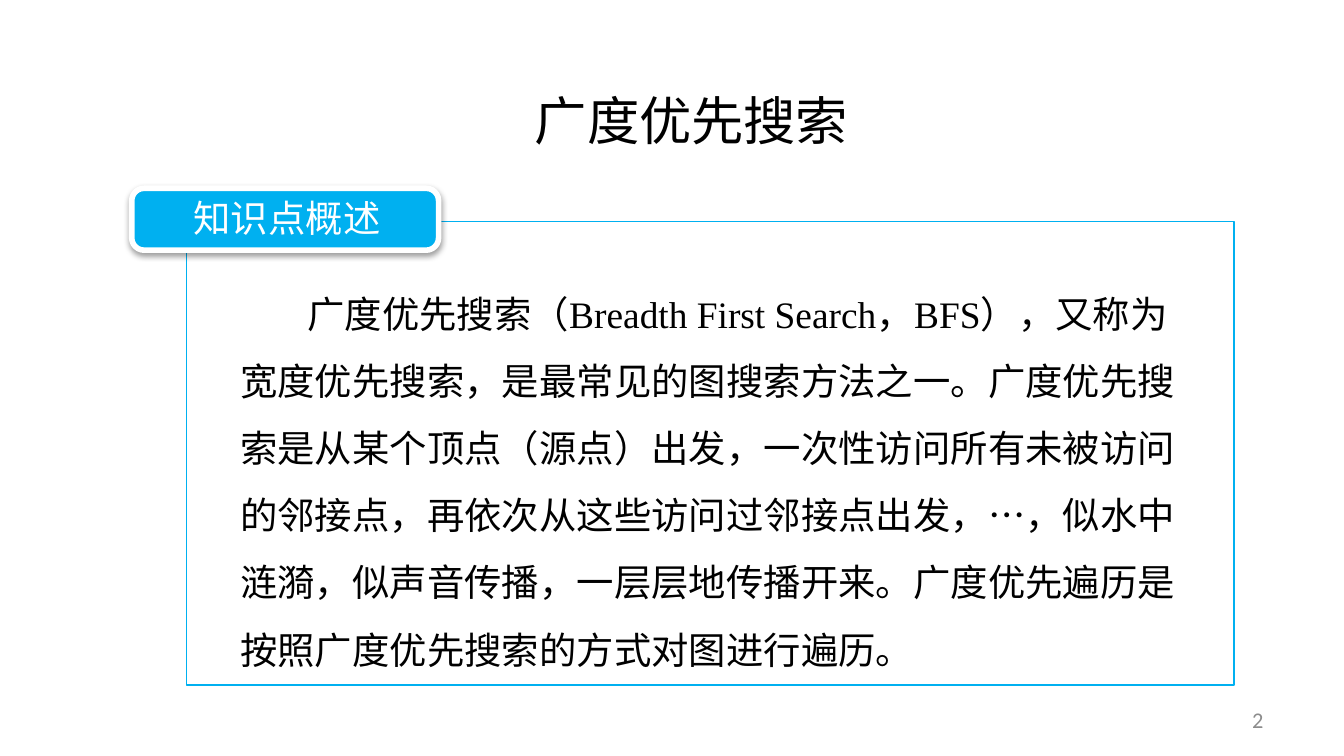
import pptx
import pptx.dml.color
import pptx.enum.shapes
import pptx.enum.text
import pptx.oxml
import pptx.oxml.ns
import pptx.util
from pptx.util import Cm

RGB = pptx.dml.color.RGBColor
BLACK = RGB(0x00, 0x00, 0x00)
WHITE = RGB(0xFF, 0xFF, 0xFF)
BLUE = RGB(0x00, 0xB0, 0xF0)
GRAY = RGB(0x8C, 0x8C, 0x8C)

SANS = "Noto Sans CJK SC"
SERIF = "Times New Roman"
PLAIN = "Calibri"

KIND = pptx.enum.shapes.MSO_SHAPE
ALIGN = pptx.enum.text.PP_ALIGN
ANCHOR = pptx.enum.text.MSO_ANCHOR

BADGE = (Cm(2.49), Cm(3.56), Cm(5.8), Cm(1.17))
LABEL = (Cm(2.49), Cm(3.56), Cm(5.87), Cm(1.12))

INTRO = [
    ("广度优先搜索（", PLAIN),
    ("Breadth First Search，BFS", SERIF),
    ("），又称为宽度优先搜索，是最常见的图搜索方法之一。广度优先搜索是从某个顶点（源点）出发，"
     "一次性访问所有未被访问的邻接点，再依次从这些访问过邻接点出发，…，似水中涟漪，似声音传播，"
     "一层层地传播开来。广度优先遍历是按照广度优先搜索的方式对图进行遍历。", PLAIN),
]


def apply(target, values):
    for name, value in values.items():
        setattr(target, name, value)


def add_xml(parent, tag, **attrs):
    """Append a drawing element and return it."""
    child = pptx.oxml.parse_xml(f"<a:{tag} {pptx.oxml.ns.nsdecls('a')}/>")
    for name, value in attrs.items():
        child.set(name, str(value))
    parent.append(child)
    return child


def add_text(slide, area, runs, size, color, para=None, frame=None, indent=0):
    box = slide.shapes.add_textbox(*area)
    apply(box.text_frame, {"word_wrap": True, **(frame or {})})
    line = box.text_frame.paragraphs[0]
    apply(line, para or {})
    if indent:
        line._p.get_or_add_pPr().set("indent", str(indent))
    for text, face in runs:
        run = line.add_run()
        run.text = text
        apply(run.font, {"name": face, "size": pptx.util.Pt(size)})
        run.font.color.rgb = color
        add_xml(run._r.get_or_add_rPr(), "ea", typeface=SANS)


def add_box(slide, kind, area, fill, edge, width):
    box = slide.shapes.add_shape(kind, *area)
    box.shadow.inherit = False
    box.fill.solid()
    box.fill.fore_color.rgb = fill
    box.line.color.rgb = edge
    box.line.width = pptx.util.Pt(width)
    return box


def fade(box, share):
    """Make the fill opaque only to the given share in percent."""
    color = box._element.spPr.find(".//" + pptx.oxml.ns.qn("a:srgbClr"))
    add_xml(color, "alpha", val=share * 1000)


def add_shade(box):
    """Cast a soft shadow straight down."""
    effects = box._element.spPr.find(pptx.oxml.ns.qn("a:effectLst"))
    shade = add_xml(effects, "outerShdw", blurRad=pptx.util.Pt(3.1),
                    dist=pptx.util.Pt(1.6), dir=90 * 60000, rotWithShape=0)
    color = add_xml(shade, "srgbClr", val=BLACK)
    add_xml(color, "alpha", val=38000)


def main():
    deck = pptx.Presentation()
    apply(deck, {"slide_width": Cm(25.4), "slide_height": Cm(14.29)})
    slide = deck.slides.add_slide(deck.slide_layouts[6])

    add_text(slide, (Cm(18.21), Cm(13.23), Cm(5.92), Cm(0.76)),
             [("2", PLAIN)], 12, GRAY, {"alignment": ALIGN.RIGHT},
             {"vertical_anchor": ANCHOR.MIDDLE})
    add_text(slide, (Cm(9.86), Cm(1.12), Cm(6.71), Cm(1.88)),
             [("广度优先搜索", SANS)], 28, BLACK, {"line_spacing": 1.35})

    panel = add_box(slide, KIND.RECTANGLE,
                    (Cm(3.53), Cm(4.19), Cm(19.79), Cm(8.76)),
                    WHITE, BLUE, 0.75)
    fade(panel, 90)
    badge = add_box(slide, KIND.ROUNDED_RECTANGLE, BADGE, BLUE, WHITE, 3)
    badge.adjustments[0] = 0.2
    add_shade(badge)

    add_text(slide, LABEL, [("知识点概述", SANS)], 20, WHITE,
             {"alignment": ALIGN.CENTER})
    add_text(slide, (Cm(4.29), Cm(4.95), Cm(18.59), Cm(7.75)),
             INTRO, 20, BLACK, {"line_spacing": 1.5}, indent=Cm(1.27))
    deck.save("out.pptx")


if __name__ == "__main__":
    main()
